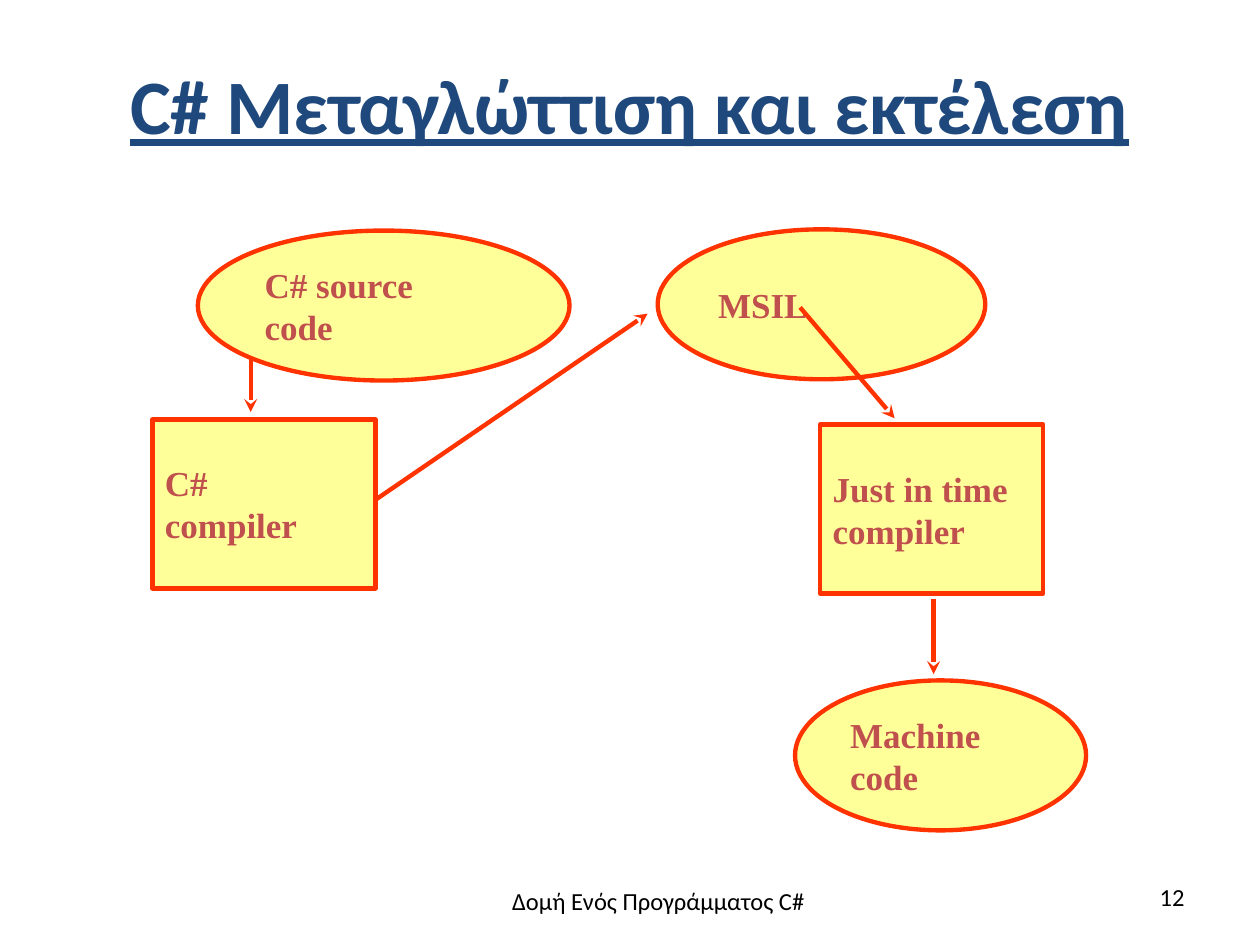
from dataclasses import dataclass

import lxml.etree
import pptx
import pptx.dml.color
import pptx.enum.shapes
import pptx.enum.text
import pptx.oxml.ns
import pptx.util

Inches = pptx.util.Inches
Pt = pptx.util.Pt
Shape = pptx.enum.shapes.MSO_SHAPE
Align = pptx.enum.text.PP_ALIGN
Anchor = pptx.enum.text.MSO_ANCHOR
qn = pptx.oxml.ns.qn

FILL, EDGE, INK = "FFFF99", "FF3300", "C0504D"
NAVY, BLACK = "1F497D", "000000"
OVAL, BOX = Shape.OVAL, Shape.RECTANGLE
OVAL_H = 1.19
BOX_W, BOX_H = 1.77, 1.34


@dataclass
class Node:
    kind: Shape
    left: float
    top: float
    width: float
    height: float
    lines: tuple[str, ...]


@dataclass
class Arrow:
    x1: float
    y1: float
    x2: float
    y2: float


@dataclass
class Label:
    left: float
    top: float
    width: float
    height: float
    text: str
    align: Align


# Back to front: the source oval covers the start of its arrow.
FLOW = (
    Node(OVAL, 5.22, 1.82, 2.6, OVAL_H, ("MSIL",)),
    Node(BOX, 1.21, 3.33, BOX_W, BOX_H, ("C#", "compiler")),
    Arrow(1.99, 2.52, 1.99, 3.27),
    Arrow(2.99, 3.96, 5.14, 2.49),
    Node(OVAL, 1.57, 1.83, 2.95, OVAL_H, ("C# source", "code")),
    Node(OVAL, 6.31, 5.4, 2.31, OVAL_H, ("Machine", "code")),
    Node(BOX, 6.51, 3.37, BOX_W, BOX_H, ("Just in time", "compiler")),
    Arrow(6.35, 2.44, 7.1, 3.32),
    Arrow(7.41, 4.75, 7.41, 5.35),
)

TITLE = Label(0.35, -0.03, 9.29, 1.69, "C# Μεταγλώττιση και εκτέλεση", Align.CENTER)
FOOTER = (
    Label(3.48, 6.98, 3.49, 0.55, "Δομή Ενός Προγράμματος C#", Align.CENTER),
    Label(7.17, 6.95, 2.33, 0.4, "12", Align.RIGHT),
)


def color(code: str) -> pptx.dml.color.RGBColor:
    return pptx.dml.color.RGBColor.from_string(code)


def style(para, face: str, size: int, code: str, bold: bool = False) -> None:
    """Set the font of a paragraph."""
    font = para.font
    font.name, font.size, font.bold = face, Pt(size), bold
    font.color.rgb = color(code)


def edge(line) -> None:
    """Give a line the colour and width of the diagram."""
    line.color.rgb = color(EDGE)
    line.width = Pt(2.5)


def draw_node(slide, node: Node) -> None:
    shape = slide.shapes.add_shape(
        node.kind, Inches(node.left), Inches(node.top),
        Inches(node.width), Inches(node.height))
    shape.shadow.inherit = False
    shape.fill.solid()
    shape.fill.fore_color.rgb = color(FILL)
    edge(shape.line)
    frame = shape.text_frame
    frame.word_wrap = True
    frame.vertical_anchor = Anchor.MIDDLE
    frame.text = "\n".join(node.lines)
    for para in frame.paragraphs:
        para.alignment = Align.LEFT
        style(para, "Times New Roman", 20, INK, bold=True)


def draw_arrow(slide, arrow: Arrow) -> None:
    line = slide.shapes.add_connector(
        pptx.enum.shapes.MSO_CONNECTOR.STRAIGHT,
        Inches(arrow.x1), Inches(arrow.y1), Inches(arrow.x2), Inches(arrow.y2))
    edge(line.line)
    props = line._element.spPr
    lxml.etree.SubElement(props.find(qn("a:ln")), qn("a:tailEnd"), type="stealth")
    lxml.etree.SubElement(props, qn("a:effectLst"))


def draw_label(slide, label: Label):
    """Add a text box and return its text frame."""
    box = slide.shapes.add_textbox(
        Inches(label.left), Inches(label.top),
        Inches(label.width), Inches(label.height))
    frame = box.text_frame
    frame.word_wrap = True
    frame.text = label.text
    para = frame.paragraphs[0]
    para.alignment = label.align
    style(para, "Calibri", 14, BLACK)
    return frame


def draw_title(slide) -> None:
    frame = draw_label(slide, TITLE)
    frame.vertical_anchor = Anchor.MIDDLE
    frame.margin_left = frame.margin_right = frame.margin_bottom = 0
    frame.margin_top = Inches(0.02)
    para = frame.paragraphs[0]
    style(para, "Calibri", 44, NAVY, bold=True)
    para.font.underline = True


def main() -> None:
    deck = pptx.Presentation()
    deck.slide_width, deck.slide_height = Inches(10), Inches(7.5)
    slide = deck.slides.add_slide(deck.slide_layouts[6])
    draw_title(slide)
    for part in FLOW:
        if isinstance(part, Node):
            draw_node(slide, part)
        else:
            draw_arrow(slide, part)
    for label in FOOTER:
        draw_label(slide, label)
    deck.save("out.pptx")


if __name__ == "__main__":
    main()
